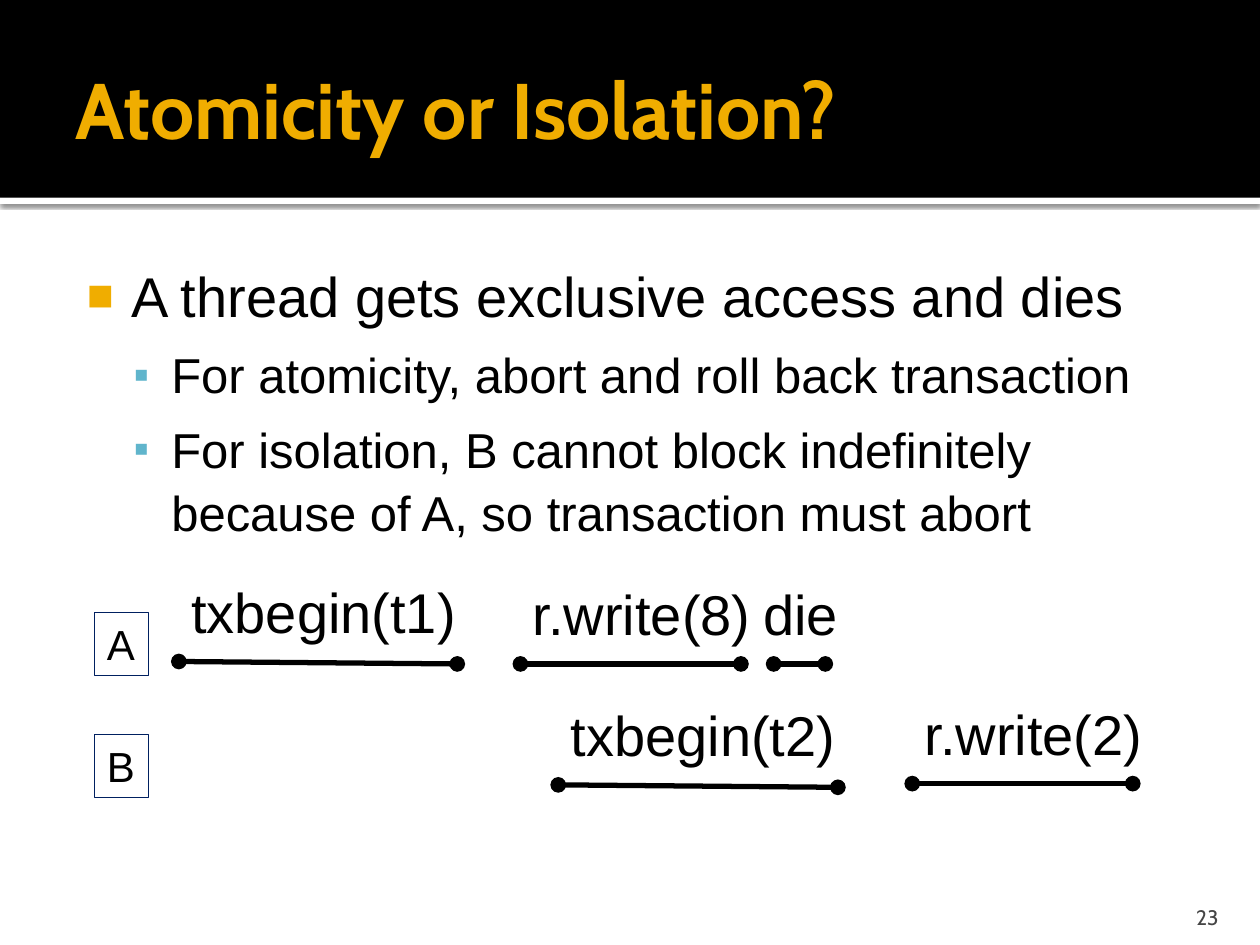
from lxml.etree import SubElement
from pptx import Presentation
from pptx.dml.color import RGBColor
from pptx.enum.shapes import MSO_CONNECTOR, MSO_SHAPE
from pptx.enum.text import MSO_ANCHOR, MSO_AUTO_SIZE, PP_ALIGN
from pptx.oxml import parse_xml
from pptx.oxml.ns import nsdecls, qn
from pptx.util import Pt

BLACK = RGBColor(0x00, 0x00, 0x00)
WHITE = RGBColor(0xFF, 0xFF, 0xFF)
AMBER = RGBColor(0xF0, 0xAD, 0x00)
SKY = RGBColor(0x60, 0xB5, 0xCC)
NAVY = RGBColor(0x00, 0x20, 0x60)
GRAY = RGBColor(0x45, 0x45, 0x45)

POINTS = [
    (0, "A thread gets exclusive access and dies"),
    (1, "For atomicity, abort and roll back transaction"),
    (1, "For isolation, B cannot block indefinitely because of A, so transaction must abort"),
]
LEVELS = [
    dict(size=32, margin=34.56, indent=-25.2, before=0, bullet="■", color=AMBER, scale=80),
    dict(size=28, margin=57.6, indent=-21.6, before=5.6, bullet="▪", color=SKY, scale=90),
]
THREADS = [("A", 349.9), ("B", 419.8)]
OPERATIONS = [
    ("txbegin(t1)", 102.2, 326.2, 167, 0, 159.1, 1.4),
    ("r.write(2)", 521.3, 396, 139.7, 0, 126, 0),
    ("r.write(8)", 297.4, 327.6, 139.7, 0, 126, 0),
    ("die", 429.1, 327.6, 57.6, 13, 29.5, 0),
    ("txbegin(t2)", 319, 396.7, 167, 0, 159.8, 1.4),
]


def place(shape, left, top, width, height):
    shape.left, shape.top = Pt(left), Pt(top)
    shape.width, shape.height = Pt(width), Pt(height)


def set_margins(text_frame, left, top, right, bottom):
    text_frame.margin_left, text_frame.margin_top = Pt(left), Pt(top)
    text_frame.margin_right, text_frame.margin_bottom = Pt(right), Pt(bottom)


def format_runs(paragraph, size, color=BLACK, name="Arial", bold=False):
    for run in paragraph.runs:
        run.font.size, run.font.name, run.font.bold = Pt(size), name, bold
        run.font.color.rgb = color


def fit_label(shape, text, size):
    text_frame = shape.text_frame
    text_frame.text = text
    text_frame.word_wrap = False
    text_frame.auto_size = MSO_AUTO_SIZE.SHAPE_TO_FIT_TEXT
    text_frame.paragraphs[0].alignment = PP_ALIGN.LEFT
    format_runs(text_frame.paragraphs[0], size)


def add_band(slide, left, top, width, height):
    stripe_height = 3.6
    parts = [(top + height, stripe_height, WHITE), (top, height, BLACK)]
    for position, (part_top, part_height, color) in enumerate(parts, start=2):
        bar = slide.shapes.add_shape(
            MSO_SHAPE.RECTANGLE, Pt(left), Pt(part_top), Pt(width), Pt(part_height))
        bar.fill.solid()
        bar.fill.fore_color.rgb = color
        bar.line.fill.background()
        bar.shadow.inherit = False
        if color == WHITE:
            effects = bar._element.spPr.find(qn("a:effectLst"))
            effects.append(parse_xml(
                f'<a:outerShdw {nsdecls("a")} blurRad="{Pt(2.5)}" dist="{Pt(0.8)}" '
                'dir="5400000" algn="tl" rotWithShape="0"><a:srgbClr val="000000">'
                '<a:alpha val="60000"/></a:srgbClr></a:outerShdw>'))
        slide.shapes._spTree.insert(position, bar._element)


def add_title(slide, left, top, width, height):
    title = slide.shapes.title
    place(title, left, top, width, height)
    text_frame = title.text_frame
    text_frame.text = "Atomicity or Isolation?"
    text_frame.auto_size = MSO_AUTO_SIZE.NONE
    text_frame.vertical_anchor = MSO_ANCHOR.MIDDLE
    set_margins(text_frame, 7.2, 3.6, 3.6, 3.6)
    text_frame.paragraphs[0].alignment = PP_ALIGN.LEFT
    format_runs(text_frame.paragraphs[0], 45, AMBER, "Cabin", True)


def add_bullet(paragraph, style):
    properties = paragraph._p.get_or_add_pPr()
    properties.set("marL", str(Pt(style["margin"])))
    properties.set("indent", str(Pt(style["indent"])))
    color = SubElement(properties, qn("a:buClr"))
    SubElement(color, qn("a:srgbClr"), val=str(style["color"]))
    SubElement(properties, qn("a:buSzPct"), val=str(style["scale"] * 1000))
    SubElement(properties, qn("a:buFont"), typeface="Arial")
    SubElement(properties, qn("a:buChar"), char=style["bullet"])


def add_points(slide, left, top, width, height):
    body = slide.placeholders[1]
    place(body, left, top, width, height)
    text_frame = body.text_frame
    text_frame.text = "\n".join(text for _, text in POINTS)
    text_frame.auto_size = MSO_AUTO_SIZE.NONE
    text_frame.vertical_anchor = MSO_ANCHOR.TOP
    set_margins(text_frame, 4.32, 7.2, 7.2, 3.6)
    for paragraph, (level, _) in zip(text_frame.paragraphs, POINTS):
        style = LEVELS[level]
        paragraph.level = level
        paragraph.line_spacing = 1.07
        paragraph.space_before = Pt(style["before"])
        paragraph.space_after = Pt(1)
        add_bullet(paragraph, style)
        format_runs(paragraph, style["size"])


def add_thread(slide, name, left, top, width, height):
    box = slide.shapes.add_shape(
        MSO_SHAPE.RECTANGLE, Pt(left), Pt(top), Pt(width), Pt(height))
    box.fill.background()
    box.line.color.rgb = NAVY
    box.line.width = Pt(0.75)
    box.shadow.inherit = False
    fit_label(box, name, 24)


def add_operation(slide, text, left, top, width, offset, length, drop):
    line_top = top + 51.8
    group = slide.shapes.add_group_shape()
    line = group.shapes.add_connector(
        MSO_CONNECTOR.STRAIGHT, Pt(left + offset), Pt(line_top),
        Pt(left + offset + length), Pt(line_top + drop))
    line.line.color.rgb = BLACK
    line.line.width = Pt(3)
    outline = line.line._get_or_add_ln()
    for end in ("a:headEnd", "a:tailEnd"):
        SubElement(outline, qn(end), type="oval")
    SubElement(line._element.spPr, qn("a:effectLst"))
    label = group.shapes.add_textbox(Pt(left), Pt(top), Pt(width), Pt(46.1))
    fit_label(label, text, 32)


def add_page_number(slide, left, top, width, height):
    box = slide.shapes.add_textbox(Pt(left), Pt(top), Pt(width), Pt(height))
    text_frame = box.text_frame
    text_frame.text = "23"
    text_frame.word_wrap = True
    text_frame.vertical_anchor = MSO_ANCHOR.BOTTOM
    set_margins(text_frame, 7.2, 3.6, 7.2, 0)
    text_frame.paragraphs[0].alignment = PP_ALIGN.RIGHT
    format_runs(text_frame.paragraphs[0], 12, GRAY, "Cabin")


def main():
    presentation = Presentation()
    presentation.slide_width, presentation.slide_height = Pt(720), Pt(540)
    slide = presentation.slides.add_slide(presentation.slide_layouts[1])
    add_band(slide, 0, 0, 720, 113)
    add_title(slide, 36, 12.2, 648, 98.6)
    add_points(slide, 36, 139.7, 648, 364.3)
    add_page_number(slide, 645.8, 509.8, 57.6, 21.6)
    for name, top in THREADS:
        add_thread(slide, name, 54, top, 31, 36)
    for operation in OPERATIONS:
        add_operation(slide, *operation)
    presentation.save("out.pptx")


if __name__ == "__main__":
    main()
